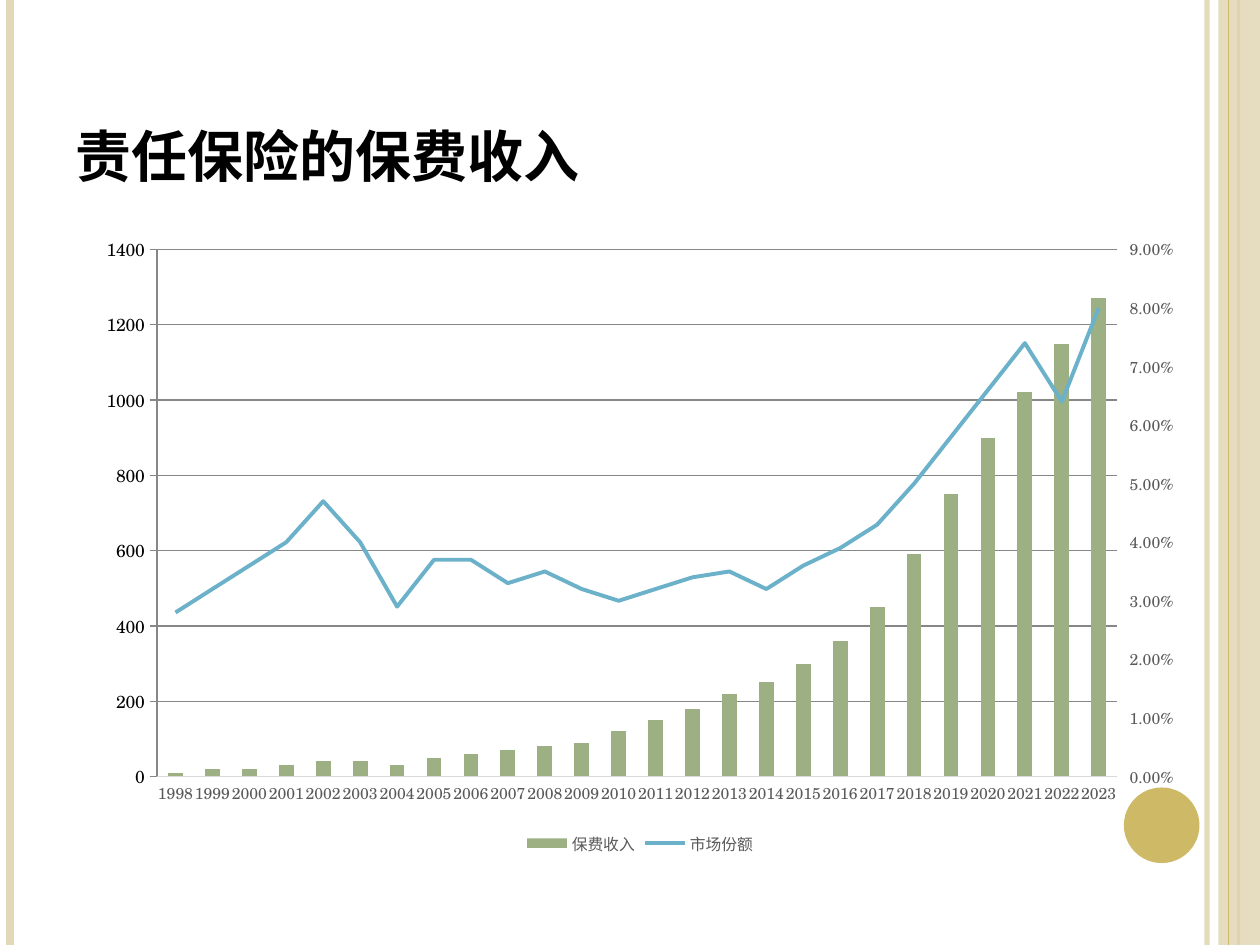
from dataclasses import dataclass

from lxml.etree import SubElement
from pptx import Presentation
from pptx.chart.axis import ValueAxis
from pptx.chart.data import CategoryChartData
from pptx.dml.color import RGBColor
from pptx.enum.chart import XL_CHART_TYPE as ChartType
from pptx.enum.chart import XL_LEGEND_POSITION as LegendPosition
from pptx.enum.chart import XL_TICK_MARK as TickMark
from pptx.enum.shapes import MSO_CONNECTOR as Connector
from pptx.enum.shapes import MSO_SHAPE as Shape
from pptx.enum.text import MSO_ANCHOR as Anchor
from pptx.oxml import parse_xml
from pptx.oxml.ns import nsdecls, qn
from pptx.util import Inches, Pt


@dataclass(frozen=True)
class Theme:
    sand: RGBColor = RGBColor(0xE3, 0xD9, 0xB8)
    gold: RGBColor = RGBColor(0xCE, 0xB9, 0x66)
    green: RGBColor = RGBColor(0x9C, 0xB0, 0x84)
    blue: RGBColor = RGBColor(0x6B, 0xB1, 0xC9)
    black: RGBColor = RGBColor(0, 0, 0)
    label: RGBColor = RGBColor(0x59, 0x59, 0x59)
    grid: RGBColor = RGBColor(0xD9, 0xD9, 0xD9)
    title_font: str = "Times New Roman"
    chart_font: str = "TeX Gyre Schola"
    title_size: Pt = Pt(32)
    chart_size: Pt = Pt(10)
    label_size: Pt = Pt(9)


THEME = Theme()

PREMIUMS = [10, 20, 20, 30, 40, 40, 30, 50, 60, 70, 80, 90, 120, 150, 180, 220,
            250, 300, 360, 450, 590, 750, 900, 1020, 1150, 1270]
SHARES = [0.028, 0.032, 0.036, 0.04, 0.047, 0.04, 0.029, 0.037, 0.037, 0.033,
          0.035, 0.032, 0.03, 0.032, 0.034, 0.035, 0.032, 0.036, 0.039, 0.043,
          0.05, 0.058, 0.066, 0.074, 0.064, 0.08]
YEARS = [str(1998 + index) for index in range(len(PREMIUMS))]

LINE_PLOT = f"""<c:lineChart {nsdecls('c')}>
  <c:grouping val="standard"/><c:varyColors val="0"/>
  <c:marker val="1"/><c:axId val="5001"/><c:axId val="5002"/>
</c:lineChart>"""
RIGHT_AXIS = f"""<c:valAx {nsdecls('c')}>
  <c:axId val="5002"/><c:scaling/><c:delete val="0"/><c:axPos val="r"/>
  <c:numFmt formatCode="0.00%" sourceLinked="0"/>
  <c:majorTickMark val="out"/><c:minorTickMark val="none"/>
  <c:tickLblPos val="nextTo"/><c:crossAx val="5001"/><c:crosses val="max"/>
</c:valAx>"""
HIDDEN_AXIS = f"""<c:catAx {nsdecls('c')}>
  <c:axId val="5001"/><c:scaling/><c:delete val="1"/><c:axPos val="b"/>
  <c:crossAx val="5002"/><c:crosses val="autoZero"/>
</c:catAx>"""


def set_alpha(color_holder, percent):
    color = next(color_holder.iter(qn("a:srgbClr")))
    SubElement(color, qn("a:alpha")).set("val", str(percent * 1000))


def set_font(font, name, size, color):
    font.name, font.size = name, size
    font.color.rgb = color


def add_stripe(slide, x, top, height, color, width):
    stripe = slide.shapes.add_connector(
        Connector.STRAIGHT, Inches(x), Inches(top), Inches(x), Inches(top + height))
    stripe.line.color.rgb = color
    stripe.line.width = Pt(width)
    SubElement(stripe._element.spPr, qn("a:effectLst"))
    return stripe


def add_block(slide, kind, left, top, width, height, color):
    block = slide.shapes.add_shape(
        kind, Inches(left), Inches(top), Inches(width), Inches(height))
    block.shadow.inherit = False
    block.fill.solid()
    block.fill.fore_color.rgb = color
    block.line.fill.background()
    return block


def add_frame(slide, left, top, width, height):
    """Side stripes, right band and corner disc."""
    right = left + width
    inner = add_stripe(slide, right - 0.42, top, height, THEME.sand, 3)
    set_alpha(inner._element.spPr, 93)
    add_stripe(slide, left + 0.08, top, height, THEME.sand, 4.5)
    add_stripe(slide, right - 0.17, top, height, THEME.gold, 1.5)
    band = add_block(slide, Shape.RECTANGLE, right - 0.33, top, 0.33, height, THEME.sand)
    set_alpha(band._element.spPr, 87)
    add_stripe(slide, right - 0.25, top, height, THEME.gold, 0.75)
    add_block(slide, Shape.OVAL, right - 1.08, top + height - 1.25, 0.6, 0.6, THEME.gold)


def add_title(slide, left, top, width, height):
    box = slide.shapes.add_textbox(
        Inches(left), Inches(top), Inches(width), Inches(height))
    frame = box.text_frame
    frame.word_wrap = True
    frame.vertical_anchor = Anchor.BOTTOM
    run = frame.paragraphs[0].add_run()
    run.text = "责任保险的保费收入"
    run.font.bold = True
    set_font(run.font, THEME.title_font, THEME.title_size, THEME.black)


def style_axis(axis, tick):
    axis.major_tick_mark, axis.minor_tick_mark = tick, TickMark.NONE
    set_font(axis.tick_labels.font, THEME.chart_font, THEME.label_size, THEME.label)
    axis.format.line.fill.background()


def style_scale(axis, maximum, step):
    axis.minimum_scale, axis.maximum_scale, axis.major_unit = 0, maximum, step


def style_grid_line(line):
    line.color.rgb = THEME.grid
    line.width = Pt(0.75)


def move_to_right_axis(chart):
    """Turn the second column series into a line with its own scale."""
    bars = chart._chartSpace.find(".//" + qn("c:barChart"))
    series = bars.findall(qn("c:ser"))[1]
    for bar_setting in series.findall(qn("c:invertIfNegative")):
        series.remove(bar_setting)
    line_plot = parse_xml(LINE_PLOT)
    line_plot.find(qn("c:varyColors")).addnext(series)
    bars.addnext(line_plot)
    right_axis = parse_xml(RIGHT_AXIS)
    chart.value_axis._element.addnext(right_axis)
    right_axis.addnext(parse_xml(HIDDEN_AXIS))
    return ValueAxis(right_axis)


def add_premium_chart(slide, left, top, width, height):
    data = CategoryChartData()
    data.categories = YEARS
    data.add_series("保费收入", PREMIUMS, "General")
    data.add_series("市场份额", SHARES, "0.00%")
    chart = slide.shapes.add_chart(
        ChartType.COLUMN_CLUSTERED, Inches(left), Inches(top),
        Inches(width), Inches(height), data).chart
    chart.has_title = False
    set_font(chart.font, THEME.chart_font, THEME.chart_size, THEME.black)
    right_axis = move_to_right_axis(chart)

    # Series
    column_plot, line_plot = chart.plots
    column_plot.gap_width = 150
    column_plot.vary_by_categories = False
    columns, line = column_plot.series[0], line_plot.series[0]
    columns.format.fill.solid()
    columns.format.fill.fore_color.rgb = THEME.green
    line.smooth = False
    line.format.line.color.rgb = THEME.blue
    line.format.line.width = Pt(2.25)
    marker = SubElement(line._element, qn("c:marker"))
    SubElement(marker, qn("c:symbol")).set("val", "none")
    line._element.find(qn("c:spPr")).addnext(marker)

    # Axes
    style_axis(chart.category_axis, TickMark.NONE)
    style_grid_line(chart.category_axis.format.line)
    body = chart.category_axis._element.find(".//" + qn("a:bodyPr"))
    body.set("rot", "-60000000")
    style_axis(chart.value_axis, TickMark.NONE)
    style_scale(chart.value_axis, 1400, 200)
    style_grid_line(chart.value_axis.major_gridlines.format.line)
    style_axis(right_axis, TickMark.OUTSIDE)
    style_scale(right_axis, 0.09, 0.01)

    # Legend
    chart.has_legend = True
    chart.legend.position = LegendPosition.BOTTOM
    chart.legend.include_in_layout = False
    set_font(chart.legend.font, THEME.chart_font, THEME.label_size, THEME.label)


def main():
    presentation = Presentation()
    presentation.slide_width, presentation.slide_height = Inches(10), Inches(7.5)
    slide = presentation.slides.add_slide(presentation.slide_layouts[6])
    add_frame(slide, 0, 0, 10, 7.5)
    add_title(slide, 0.5, 0.3, 8.17, 1.25)
    add_premium_chart(slide, 0.67, 1.78, 8.82, 5.04)
    presentation.save("out.pptx")


if __name__ == "__main__":
    main()
